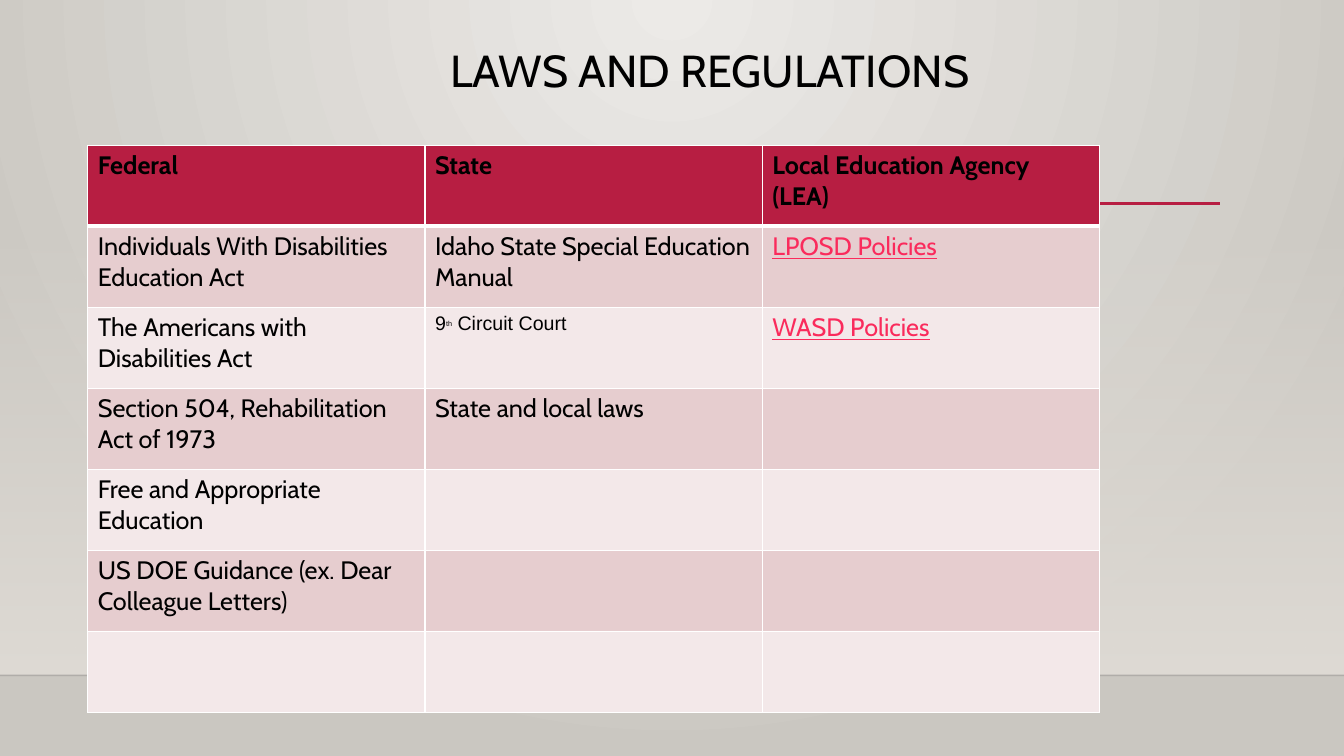
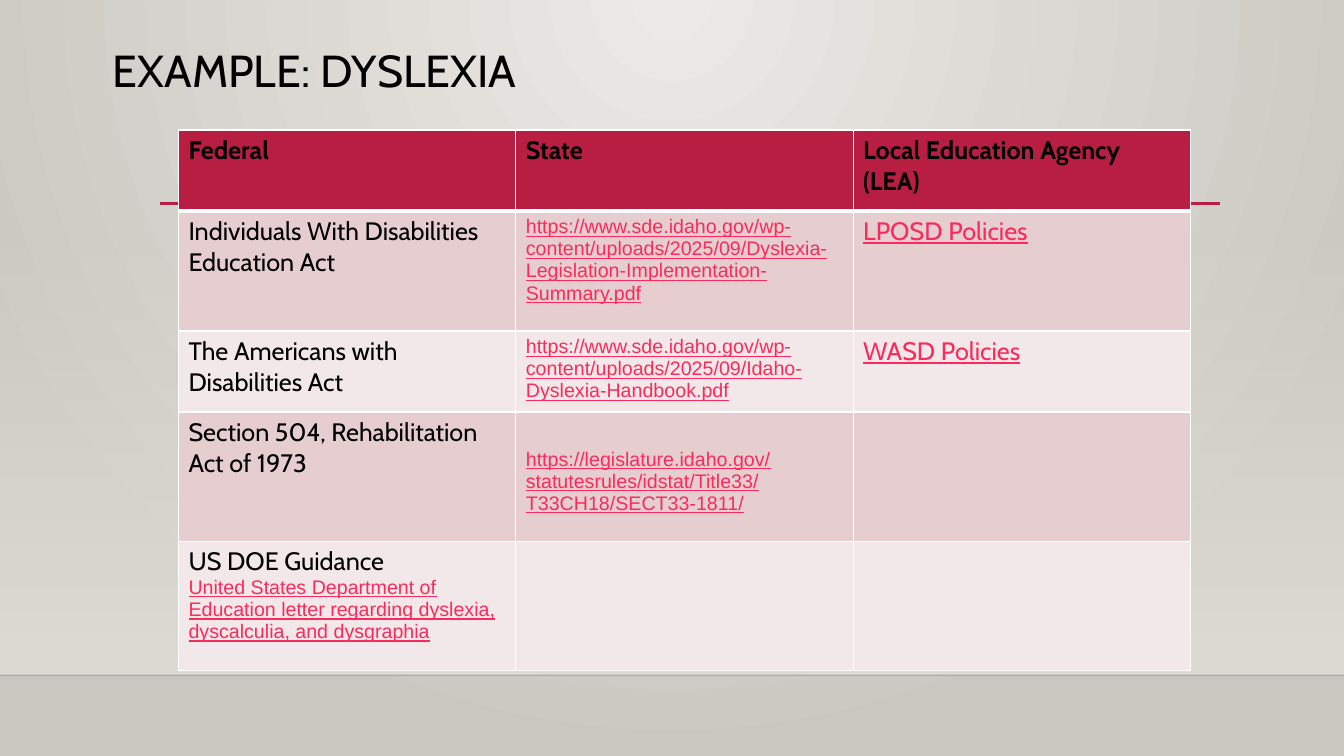
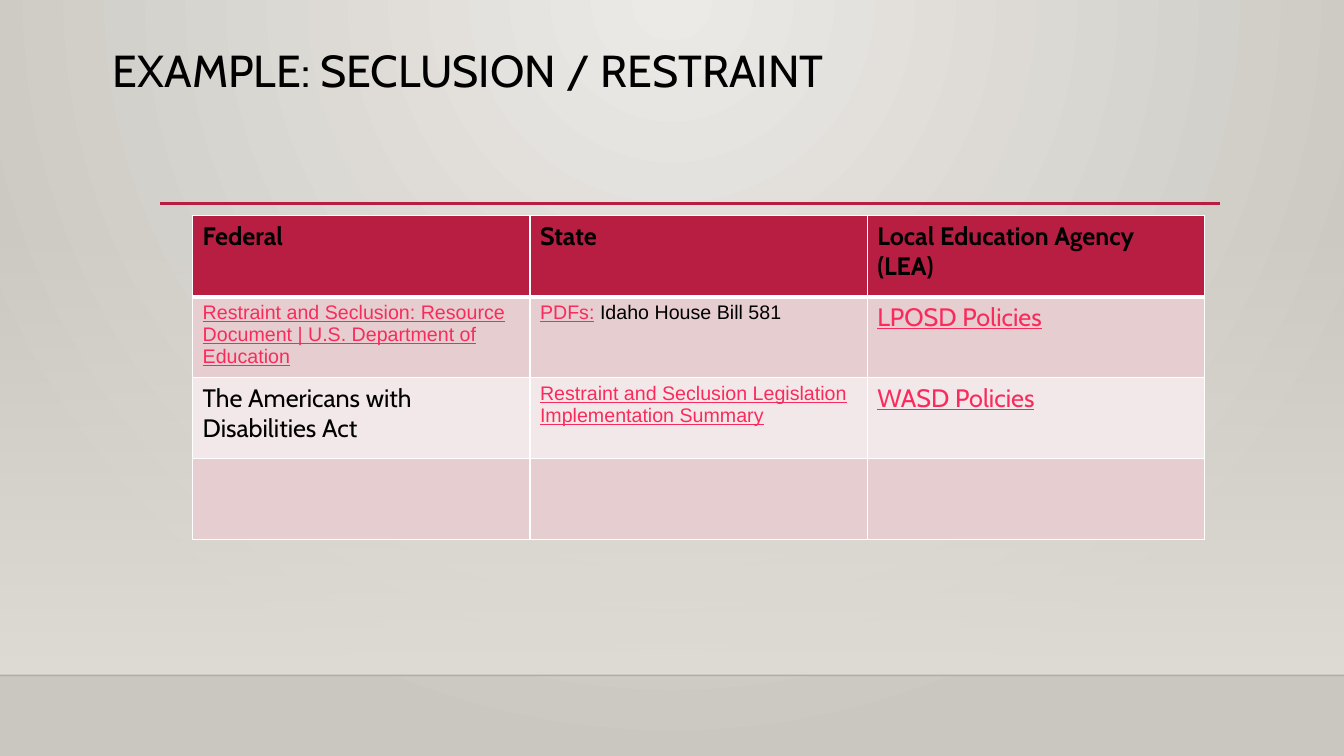
from dataclasses import dataclass

from lxml.etree import SubElement
from pptx import Presentation
from pptx.dml.color import RGBColor
from pptx.enum.shapes import MSO_CONNECTOR, MSO_SHAPE
from pptx.enum.text import MSO_ANCHOR, PP_ALIGN
from pptx.oxml.ns import qn
from pptx.util import Inches, Pt


# Theme: colours, fonts and type sizes
@dataclass(frozen=True)
class TextStyle:
    font: str = "Cabin"
    size: int = 18
    color: str = "000000"
    bold: bool = False
    underline: bool = False
    baseline: int = 0


@dataclass(frozen=True)
class Theme:
    accent: str = "B71E42"
    border: str = "FFFFFF"
    rows: tuple = ("E6CDCF", "F3E8E9")
    backdrop: tuple = ("ECEAE7", "CAC7C1")
    band: str = "DFDBD5"
    floor: str = "000001"
    title: TextStyle = TextStyle(size=32)
    header: TextStyle = TextStyle(bold=True)
    body: TextStyle = TextStyle()
    link: TextStyle = TextStyle(color="FA2B5C", underline=True)
    small: TextStyle = TextStyle(font="Arial", size=14)
    ordinal: TextStyle = TextStyle(font="Arial", size=9, baseline=30000)
    small_link: TextStyle = TextStyle(font="Arial", size=14, color="FA2B5C", underline=True)


theme = Theme()


def set_font(font, style):
    font.name = style.font
    font.size = Pt(style.size)
    font.bold = style.bold
    font.underline = style.underline
    font.color.rgb = RGBColor.from_string(style.color)


def fill_paragraph(paragraph, runs):
    """Write (style, text) runs; a lone run is styled on its paragraph."""
    for style, text in runs:
        run = paragraph.add_run()
        run.text = text
        if len(runs) > 1:
            set_font(run.font, style)
            if style.baseline:
                run.font._element.set("baseline", str(style.baseline))
    if len(runs) == 1:
        set_font(paragraph.font, runs[0][0])


# Slide size, in percent units, and the table grid
presentation = Presentation()
presentation.slide_width, presentation.slide_height = Inches(13.333), Inches(7.5)
across, down = presentation.slide_width / 100, presentation.slide_height / 100
column_width = int(25.1 * across)
row_share = 10.72
band_top, floor_top, rule_top = 29.47, 89.33, 26.93

# Cells: each is a list of paragraphs, each paragraph a list of runs
header = [[[(theme.header, text)]]
          for text in ("Federal", "State", "Local Education Agency (LEA)")]
disabilities_education = [[(theme.body, "Individuals With Disabilities Education Act")]]
americans_act = [[(theme.body, "The Americans with Disabilities Act")]]
section_504 = [[(theme.body, "Section 504, Rehabilitation Act of 1973")]]
lposd = [[(theme.link, "LPOSD Policies")]]
wasd = [[(theme.link, "WASD Policies")]]
empty = []

slides = [
    dict(
        title="LAWS AND REGULATIONS", align=PP_ALIGN.RIGHT, left=6.53, top=19.2,
        heights=[row_share] * 7, lowered=None,
        rows=[
            [disabilities_education,
             [[(theme.body, "Idaho State Special Education Manual")]], lposd],
            [americans_act,
             [[(theme.small, "9"), (theme.ordinal, "th"), (theme.small, " Circuit Court")]],
             wasd],
            [section_504, [[(theme.body, "State and local laws")]], empty],
            [[[(theme.body, "Free and Appropriate Education")]], empty, empty],
            [[[(theme.body, "US DOE Guidance (ex. Dear Colleague Letters)")]], empty, empty],
            [empty] * 3,
        ]),
    dict(
        title="EXAMPLE: DYSLEXIA", align=PP_ALIGN.LEFT, left=13.28, top=17.2,
        heights=[row_share, 15.87, row_share, 17.07, 17.07], lowered=(3, 1),
        rows=[
            [disabilities_education,
             [[(theme.small_link, "https://www.sde.idaho.gov/wp-content/uploads/2025/09/"
                "Dyslexia-Legislation-Implementation-Summary.pdf")]], lposd],
            [americans_act,
             [[(theme.small_link, "https://www.sde.idaho.gov/wp-content/uploads/2025/09/"
                "Idaho-Dyslexia-Handbook.pdf")]], wasd],
            [section_504,
             [[(theme.small_link, "https://legislature.idaho.gov/statutesrules/idstat/"
                "Title33/T33CH18/SECT33-1811/")]], empty],
            [[[(theme.body, "US DOE Guidance")],
              [(theme.small_link, "United States Department of Education letter regarding "
                "dyslexia, dyscalculia, and dysgraphia")]], empty, empty],
        ]),
    dict(
        title="EXAMPLE: SECLUSION / RESTRAINT", align=PP_ALIGN.LEFT, left=14.33, top=28.53,
        heights=[row_share] * 4, lowered=None,
        rows=[
            [[[(theme.small_link, "Restraint and Seclusion: Resource Document | "
                "U.S. Department of Education")]],
             [[(theme.small_link, "PDFs:"), (theme.small, " Idaho House Bill 581")]], lposd],
            [americans_act,
             [[(theme.small_link, "Restraint and Seclusion Legislation "
                "Implementation Summary")]], wasd],
            [empty] * 3,
        ]),
]

# Shared backdrop: a glow from the top centre, set on the master
backdrop = presentation.slide_master.background.fill
backdrop.gradient()
for stop, color in zip(backdrop.gradient_stops, theme.backdrop):
    stop.color.rgb = RGBColor.from_string(color)
linear = next(presentation.slide_master._element.cSld.iter(qn("a:lin")))
gradient = linear.getparent()
gradient.remove(linear)
glow = SubElement(gradient, qn("a:path"), path="circle")
SubElement(glow, qn("a:fillToRect"), l="43000", t="0", r="43000", b="100000")

for content in slides:
    slide = presentation.slides.add_slide(presentation.slide_layouts[6])

    # Wall band, fading in downwards
    band = slide.shapes.add_shape(
        MSO_SHAPE.RECTANGLE, 0, int(band_top * down),
        presentation.slide_width, int((floor_top - band_top) * down))
    band.shadow.inherit = False
    band.line.fill.background()
    band.fill.gradient()
    band.fill.gradient_angle = 270
    for stop in band.fill.gradient_stops:
        stop.color.rgb = RGBColor.from_string(theme.band)
    clear_color = next(band._element.iter(qn("a:srgbClr")))
    SubElement(clear_color, qn("a:alpha"), val="0")

    # Floor line and accent rule
    for start, end, top, color, weight, opacity in (
            (0, 100, floor_top, theme.floor, 1, 20),
            (11.93, 90.75, rule_top, theme.accent, 2.5, 100)):
        line = slide.shapes.add_connector(
            MSO_CONNECTOR.STRAIGHT, int(start * across), int(top * down),
            int(end * across), int(top * down))
        line.line.color.rgb = RGBColor.from_string(color)
        line.line.width = Pt(weight)
        line_color = next(line._element.iter(qn("a:srgbClr")))
        SubElement(line_color, qn("a:alpha"), val=str(opacity * 1000))
        SubElement(line._element.spPr, qn("a:effectLst"))

    # Title
    title = slide.shapes.add_textbox(
        int(7.65 * across), int(5.73 * down), int(65.25 * across), int(15.73 * down))
    title.text_frame.word_wrap = True
    title.text_frame.vertical_anchor = MSO_ANCHOR.TOP
    paragraph = title.text_frame.paragraphs[0]
    paragraph.alignment = content["align"]
    paragraph.line_spacing = 0.9
    fill_paragraph(paragraph, [(theme.title, content["title"])])

    # Table
    rows = [header] + content["rows"]
    heights = [int(share * down) for share in content["heights"]]
    table = slide.shapes.add_table(
        len(rows), len(header), int(content["left"] * across), int(content["top"] * down),
        column_width * len(header), sum(heights)).table
    for column in table.columns:
        column.width = column_width
    for row_index, row in enumerate(rows):
        table.rows[row_index].height = heights[row_index]
        for column_index, paragraphs in enumerate(row):
            cell = table.cell(row_index, column_index)

            # White borders, heavier under the header
            properties = cell._tc.get_or_add_tcPr()
            for side in ("L", "R", "T", "B"):
                heavy = (row_index, side) in ((0, "B"), (1, "T"))
                border = SubElement(properties, qn(f"a:ln{side}"), w=str(Pt(3 if heavy else 1)))
                solid = SubElement(border, qn("a:solidFill"))
                SubElement(solid, qn("a:srgbClr"), val=theme.border)

            cell.fill.solid()
            cell.fill.fore_color.rgb = RGBColor.from_string(
                theme.rows[(row_index - 1) % 2] if row_index else theme.accent)
            if (row_index, column_index) == content["lowered"]:
                cell.margin_top = int(4.8 * down)
            for index, runs in enumerate(paragraphs):
                frame = cell.text_frame
                paragraph = frame.add_paragraph() if index else frame.paragraphs[0]
                fill_paragraph(paragraph, runs)

presentation.save("out.pptx")
